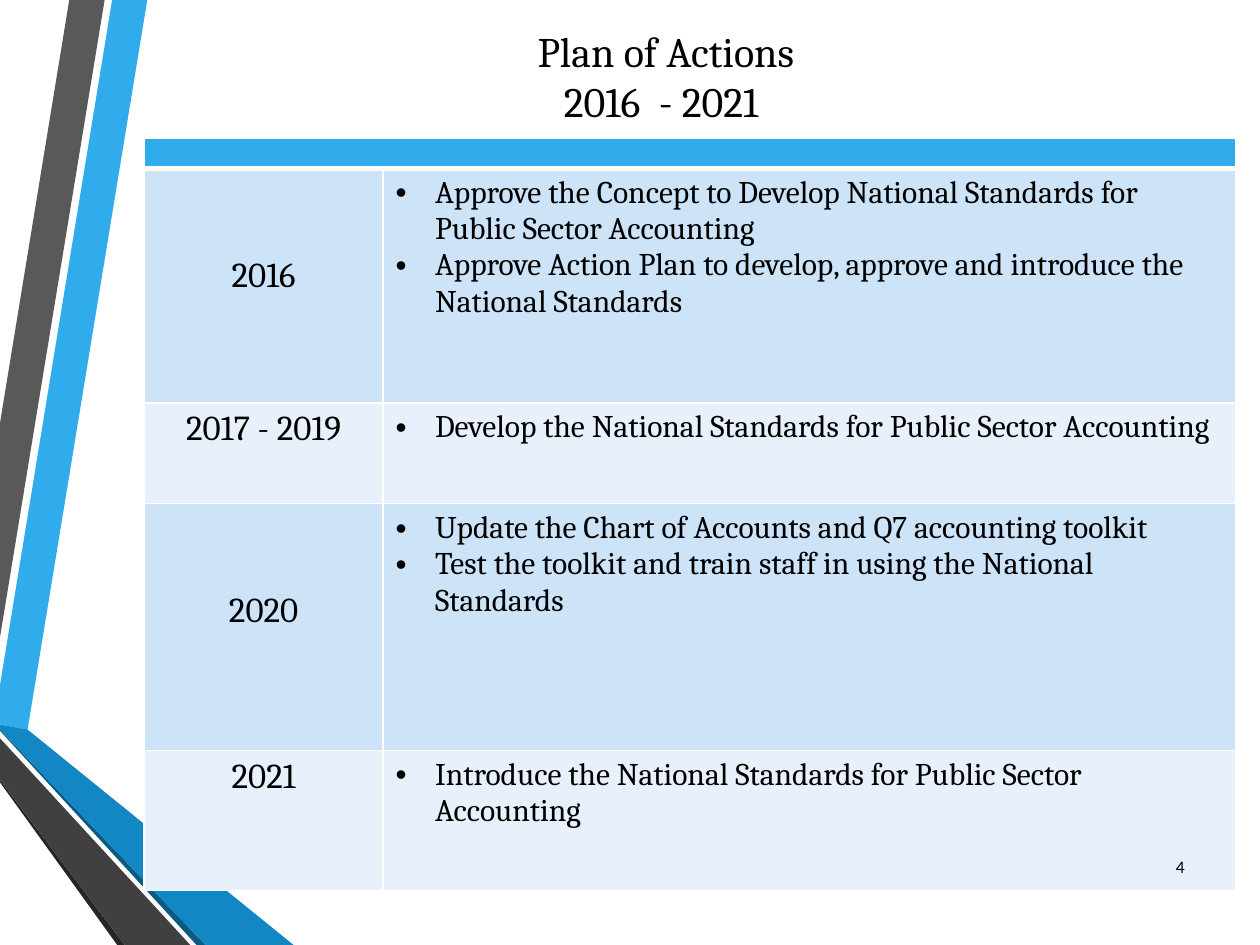
from dataclasses import dataclass
from lxml.etree import SubElement as Sub
from pptx import Presentation
from pptx.dml.color import RGBColor as RGB
from pptx.enum.text import MSO_ANCHOR as Anchor, PP_ALIGN as Align
from pptx.oxml.ns import qn
from pptx.util import Pt


@dataclass(frozen=True)
class Theme:
    head: str = "Cambria"
    foot: str = "Calibri"
    ink: str = "000000"
    white: str = "FFFFFF"
    sky: str = "30ACEC"
    blue: str = "1287C3"
    navy: str = "0C5A82"
    gray: str = "595959"
    dark: str = "404040"
    coal: str = "262626"
    bands: tuple = ("CDE3F8", "E8F1FB")
    title: int = 24
    year: int = 20
    body: int = 18
    note: int = 10
    tiny: int = 8


def write(para, text, size, font, color, align=Align.LEFT, bullet=None, indent=22.5):
    para.alignment = align
    for i, line in enumerate(text.split("\n")):
        if i:
            para.add_line_break()
        run = para.add_run()
        run.text = line
        run.font.size = Pt(size)
        run.font.name = font
        run.font.color.rgb = RGB.from_string(color)
    if bullet:
        props = para._p.get_or_add_pPr()
        props.set("marL", str(Pt(indent)))
        props.set("indent", str(-Pt(indent)))
        Sub(props, qn("a:buFont"), typeface="Arial")
        Sub(props, qn("a:buChar"), char=bullet)


class Page:
    def __init__(self, deck, theme):
        self.look = theme
        self.slide = deck.slides.add_slide(deck.slide_layouts[5])

    def band(self, color, *points):
        start, *rest = [(Pt(x), Pt(y)) for x, y in points]
        pen = self.slide.shapes.build_freeform(*start, scale=1.0)
        pen.add_line_segments(rest, close=True)
        shape = pen.convert_to_shape()
        shape.shadow.inherit = False
        shape.fill.solid()
        shape.fill.fore_color.rgb = RGB.from_string(color)
        shape.line.fill.background()

    def title(self, text, left, top, width, height):
        shape = self.slide.shapes.title
        shape.left, shape.top = Pt(left), Pt(top)
        shape.width, shape.height = Pt(width), Pt(height)
        frame = shape.text_frame
        frame.vertical_anchor = Anchor.MIDDLE
        write(frame.paragraphs[0], text, size=self.look.title, font=self.look.head,
              color=self.look.ink, align=Align.CENTER)

    def label(self, text, left, top, width, height):
        box = self.slide.shapes.add_textbox(Pt(left), Pt(top), Pt(width), Pt(height))
        frame = box.text_frame
        frame.word_wrap = True
        frame.vertical_anchor = Anchor.MIDDLE
        write(frame.paragraphs[0], text, size=self.look.note, font=self.look.foot,
              color=self.look.ink, align=Align.RIGHT)

    def paint(self, cell, color, top=1, bottom=1):
        props = cell._tc.get_or_add_tcPr()
        for side, width in (("L", 1), ("R", 1), ("T", top), ("B", bottom)):
            line = Sub(props, qn(f"a:ln{side}"), w=str(Pt(width)))
            Sub(Sub(line, qn("a:solidFill")), qn("a:srgbClr"), val=self.look.white)
        cell.fill.solid()
        cell.fill.fore_color.rgb = RGB.from_string(color)

    def table(self, plan, left, top, cols, head):
        look = self.look
        high = [head] + [row[1] for row in plan]
        grid = self.slide.shapes.add_table(
            len(high), len(cols), Pt(left), Pt(top), Pt(sum(cols)), Pt(sum(high))).table
        grid.first_row = grid.horz_banding = False
        for col, width in zip(grid.columns, cols):
            col.width = Pt(width)
        for row, height in zip(grid.rows, high):
            row.height = Pt(height)
        for cell in grid.rows[0].cells:
            self.paint(cell, look.sky, bottom=3)
            para = cell.text_frame.paragraphs[0]
            Sub(para._p, qn("a:endParaRPr"), sz=str(look.tiny * 100))
        grid.cell(0, 0).merge(grid.cell(0, 1))
        for r, (year, _, drop, tasks) in enumerate(plan, 1):
            when, what = grid.cell(r, 0), grid.cell(r, 1)
            for cell in (when, what):
                self.paint(cell, look.bands[(r - 1) % 2], top=3 if r == 1 else 1)
            when.margin_top = Pt(drop)
            write(when.text_frame.paragraphs[0], year, size=look.year,
                  font=look.head, color=look.ink, align=Align.CENTER)
            frame = what.text_frame
            for i, task in enumerate(tasks):
                para = frame.add_paragraph() if i else frame.paragraphs[0]
                write(para, task, size=look.body, font=look.head,
                      color=look.ink, bullet="•")


def main():
    deck = Presentation()
    deck.slide_width, deck.slide_height = Pt(720), Pt(540)
    look = Theme()
    page = Page(deck, look)

    page.band(look.sky, (0, 391.7), (0, 414), (15.8, 416.9), (84.2, 0), (64.1, 0))
    page.band(look.gray, (59.8, 0), (39.6, 0), (0, 241.9), (0, 364.3))
    page.band(look.coal, (0, 445.7), (0, 447.1), (67, 540), (71.3, 540))
    page.band(look.navy, (0, 416.9), (0, 417.6), (112.3, 540), (117.4, 540))
    page.band(look.blue, (0, 416.9), (117.4, 540), (167.8, 540), (15.8, 416.9), (0, 414))
    page.band(look.dark, (0, 445.7), (71.3, 540), (108.7, 540), (0, 421.9))

    page.title("Plan of Actions\n2016  - 2021 ", 77, 9.4, 607, 67.7)
    plan = [
        ("2016", 134, 50, [
            "Approve the Concept to Develop National Standards for Public Sector Accounting",
            "Approve Action Plan to develop, approve and introduce the National Standards"]),
        ("2017 - 2019", 57.6, 3.6, [
            "Develop the National Standards for Public Sector Accounting"]),
        ("2020", 141, 50, [
            "Update the Chart of Accounts and Q7 accounting toolkit",
            "Test the toolkit and train staff in using the National Standards"]),
        ("2021", 80, 3.6, [
            "Introduce the National Standards for Public Sector Accounting"]),
    ]
    page.table(plan, 82.4, 79.2, cols=(136.5, 487.3), head=17)
    page.label("4", 650, 481, 34, 28.8)
    deck.save("out.pptx")


if __name__ == "__main__":
    main()
